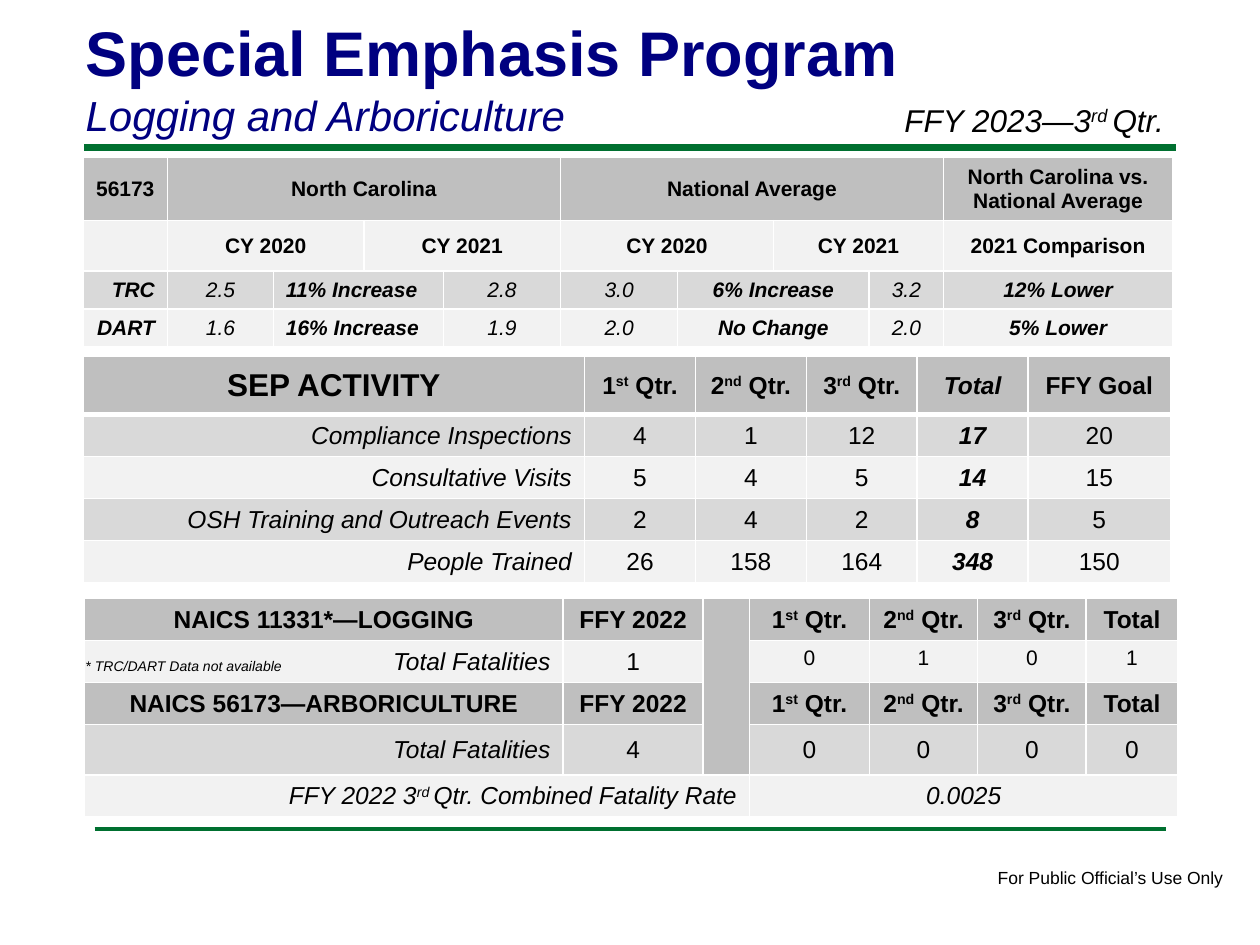
from lxml import etree
from pptx import Presentation
from pptx.dml.color import RGBColor
from pptx.enum.shapes import MSO_CONNECTOR
from pptx.enum.text import MSO_ANCHOR, MSO_AUTO_SIZE, PP_ALIGN
from pptx.oxml import parse_xml
from pptx.oxml.ns import nsdecls, qn
from pptx.util import Inches, Pt

NAVY = RGBColor(0x00, 0x00, 0x80)
GREEN = RGBColor(0x00, 0x70, 0x30)
BLACK = RGBColor(0x00, 0x00, 0x00)
HEAD = RGBColor(0xBF, 0xBF, 0xBF)
DARK = RGBColor(0xD9, 0xD9, 0xD9)
LIGHT = RGBColor(0xF2, 0xF2, 0xF2)

ALIGN = {"l": PP_ALIGN.LEFT, "c": PP_ALIGN.CENTER, "r": PP_ALIGN.RIGHT}


class SlideBuilder:
    font = "Arial"

    def __init__(self, prs):
        self.s = prs.slides.add_slide(prs.slide_layouts[5])

    def add_runs(self, p, text, size, color=BLACK, bold=False, italic=False):
        """Fill a paragraph; text between ^ marks is superscript."""
        fmt = {"name": self.font, "size": Pt(size), "bold": bold, "italic": italic}
        for i, part in enumerate(text.split("^")):
            if not part:
                continue
            r = p.add_run()
            r.text = part
            for key, value in fmt.items():
                setattr(r.font, key, value)
            r.font.color.rgb = color
            if i % 2:
                r._r.get_or_add_rPr().set("baseline", "30000")

    def title(self, box, lines):
        sp = self.s.shapes.title
        sp.left, sp.top, sp.width, sp.height = map(Inches, box)
        tf = sp.text_frame
        tf.auto_size = MSO_AUTO_SIZE.NONE
        tf.vertical_anchor = MSO_ANCHOR.TOP
        for i, (text, fmt) in enumerate(lines):
            p = tf.add_paragraph() if i else tf.paragraphs[0]
            p.alignment = PP_ALIGN.LEFT
            p.space_before = Pt(0)
            self.add_runs(p, text, color=NAVY, **fmt)

    def text(self, box, text, size, wrap=True, **fmt):
        tf = self.s.shapes.add_textbox(*map(Inches, box)).text_frame
        tf.word_wrap = wrap
        tf.auto_size = MSO_AUTO_SIZE.SHAPE_TO_FIT_TEXT
        self.add_runs(tf.paragraphs[0], text, size, **fmt)

    def rule(self, left, right, y, width):
        ends = map(Inches, (left, y, right, y))
        line = self.s.shapes.add_connector(MSO_CONNECTOR.STRAIGHT, *ends)
        line.line.color.rgb = GREEN
        line.line.width = Pt(width)
        etree.SubElement(line._element.spPr, qn("a:effectLst"))

    def borders(self, cell, **widths):
        tc_pr = cell._tc.get_or_add_tcPr()
        for side in "LRTB":
            tc_pr.append(parse_xml(
                f'<a:ln{side} {nsdecls("a")} w="{Pt(widths.get(side, 1))}">'
                f'<a:solidFill><a:srgbClr val="FFFFFF"/></a:solidFill></a:ln{side}>'))

    def table(self, left, top, cols, heights, rows, size, head_line=1):
        """Rows are (fill, styles, texts); a text of None joins the cell to its left.

        Style letters: b bold, i italic, l/c/r alignment, s small text at the top.
        """
        box = map(Inches, (left, top, sum(cols), sum(heights)))
        table = self.s.shapes.add_table(len(rows), len(cols), *box).table
        table.first_row = table.horz_banding = False
        for col, width in zip(table.columns, cols):
            col.width = Inches(width)
        for row, height in zip(table.rows, heights):
            row.height = Inches(height)
        for y, (fill, styles, texts) in enumerate(rows):
            for x, (style, text) in enumerate(zip(styles.split(), texts)):
                cell = table.cell(y, x)
                widths = {0: {"B": head_line}, 1: {"T": head_line}}.get(y, {})
                self.borders(cell, **widths)
                cell.fill.solid()
                cell.fill.fore_color.rgb = fill
                small = "s" in style
                cell.vertical_anchor = MSO_ANCHOR.TOP if small else MSO_ANCHOR.MIDDLE
                if text:
                    p = cell.text_frame.paragraphs[0]
                    p.alignment = next(ALIGN[k] for k in style if k in ALIGN)
                    self.add_runs(p, text, 12 if small else size,
                                  bold="b" in style, italic="i" in style)
            # Join each cell with the empty places that follow it
            start = 0
            for x in range(1, len(cols) + 1):
                if x == len(cols) or texts[x] is not None:
                    if x - start > 1:
                        table.cell(y, start).merge(table.cell(y, x - 1))
                    start = x
        return table


def main():
    prs = Presentation()
    prs.slide_width, prs.slide_height = Inches(10), Inches(7.5)
    b = SlideBuilder(prs)

    # Heading, rules and footer
    b.rule(0.67, 9.33, 1.17, 4)
    b.rule(0.75, 9.25, 6.58, 2)
    b.text((7.82, 6.83, 2.01, 0.27), "For Public Official’s Use Only", 10, wrap=False)
    b.title((0.58, 0.06, 8.25, 1.11), [
        ("Special Emphasis Program", {"size": 36, "bold": True}),
        ("Logging and Arboriculture", {"size": 24, "italic": True}),
    ])
    b.text((7.08, 0.75, 2.5, 0.4), "FFY 2023—3^rd ^Qtr.", 18, italic=True)

    quarters = ["1^st^ Qtr.", "2^nd^ Qtr.", "3^rd^ Qtr."]

    # Program activity
    activity = [
        ("Compliance Inspections", 4, 1, 12, 17, 20),
        ("Consultative Visits", 5, 4, 5, 14, 15),
        ("OSH Training and Outreach Events", 2, 4, 2, 8, 5),
        ("People Trained", 26, 158, 164, 348, 150),
    ]
    rows = [(HEAD, "bc bc bc bc bic bc", ["", *quarters, "Total", "FFY Goal"])]
    rows += [((DARK, LIGHT)[i % 2], "ir c c c bic c", [str(v) for v in values])
             for i, values in enumerate(activity)]
    table = b.table(0.66, 2.83, [3.98] + [0.88] * 4 + [1.13],
                    [0.46] + [0.33] * 4, rows, 14, head_line=3)
    p = table.cell(0, 0).text_frame.paragraphs[0]
    p.alignment = PP_ALIGN.CENTER
    b.add_runs(p, "SEP ACTIVITY", 18, bold=True)

    # Fatalities
    head = "bc " * 7
    rate = "FFY 2022 3^rd ^Qtr. Combined Fatality Rate"
    table = b.table(0.67, 4.75, [3.8, 1.11, 0.37, 0.95, 0.86, 0.86, 0.73], [0.33] * 5, [
        (HEAD, head, ["NAICS 11331*—LOGGING", "FFY 2022", "", *quarters, "Total"]),
        (LIGHT, "ir c c sc sc sc sc", ["Total Fatalities", "1", "", *"0101"]),
        (HEAD, head, ["NAICS 56173—ARBORICULTURE", "FFY 2022", "", *quarters, "Total"]),
        (DARK, "ir c c c c c c", ["Total Fatalities", "4", "", *"0000"]),
        (LIGHT, "ir c c ic c c c", [rate, None, None, "0.0025", None, None, None]),
    ], 14)
    table.cell(0, 2).merge(table.cell(3, 2))
    b.text((0.58, 5.17, 1.78, 0.24), "* TRC/DART Data not available", 8,
           wrap=False, italic=True)

    # State and national rates
    bold = "bc " * 10
    rates = "bir ic bil c ic ic bic c ic bic"
    years = ["CY 2020", None, "CY 2021", None]
    b.table(0.66, 1.25, [0.67, 0.84, 0.72, 0.63, 0.93, 0.93, 0.76, 0.76, 0.59, 1.82],
            [0.5, 0.4, 0.3, 0.3], [
        (HEAD, bold, ["56173", "North Carolina", None, None, None,
                      "National Average", None, None, None,
                      "North Carolina vs. National Average"]),
        (LIGHT, bold, ["", *years, *years, "2021 Comparison"]),
        (DARK, rates, ["TRC", "2.5", "11% Increase", None, "2.8",
                       "3.0", "6% Increase", None, "3.2", "12% Lower"]),
        (LIGHT, rates, ["DART", "1.6", "16% Increase", None, "1.9",
                        "2.0", "No Change", None, "2.0", "5% Lower"]),
    ], 12)

    prs.save("out.pptx")


if __name__ == "__main__":
    main()
